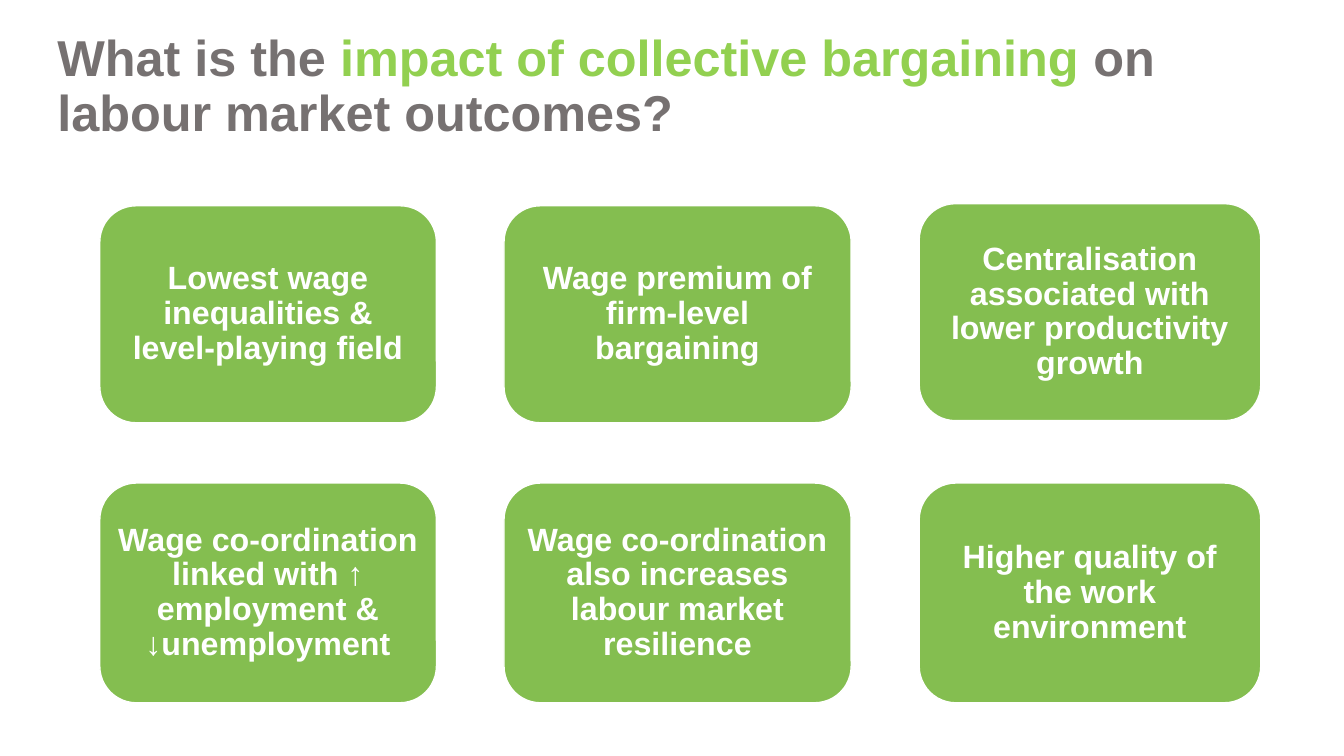
import pptx
import pptx.util
import pptx.dml.color
import pptx.enum.shapes
import pptx.enum.text

Pt = pptx.util.Pt
GREEN, WHITE, GREY, LIME = "84BE50", "FFFFFF", "767171", "92D050"


def rgb(code):
    return pptx.dml.color.RGBColor.from_string(code)


def write(shape, runs, size, align="LEFT", pad=7.2):
    """Fill a shape with one bold paragraph made of (text, colour) runs."""
    frame = shape.text_frame
    frame.word_wrap = True
    frame.vertical_anchor = pptx.enum.text.MSO_ANCHOR.MIDDLE
    frame.margin_left = frame.margin_right = Pt(pad)
    para = frame.paragraphs[0]
    para.alignment = getattr(pptx.enum.text.PP_ALIGN, align)
    para.line_spacing = 0.9
    for text, color in runs:
        run = para.add_run()
        run.text = text
        run.font.name = "Arial"
        run.font.size = Pt(size)
        run.font.bold = True
        run.font.color.rgb = rgb(color)


deck = pptx.Presentation()
deck.slide_width, deck.slide_height = Pt(960), Pt(540)
slide = deck.slides.add_slide(deck.slide_layouts[6])

title = slide.shapes.add_textbox(Pt(33.84), Pt(22.3), Pt(900.7), Pt(80.6))
write(title, [("What is the ", GREY),
              ("impact of collective bargaining ", LIME),
              ("on labour market outcomes?", GREY)], 36)

# Each card: left, top, width, height, side padding, text
cards = [
    (71.3, 147, 240.5, 155, 7.2, "Lowest wage inequalities & level-playing field"),
    (360, 147, 248, 155, 7.2, "Wage premium of firm-level bargaining"),
    (656.6, 145.5, 244, 155, 7.2, "Centralisation associated with lower productivity growth"),
    (71.3, 345, 240.5, 157, 0, "Wage co-ordination linked with ↑ employment & ↓unemployment"),
    (360, 345, 248, 157, 7.2, "Wage co-ordination also increases labour market resilience"),
    (656.6, 345, 244, 157, 7.2, "Higher quality of the work environment"),
]
kind = pptx.enum.shapes.MSO_SHAPE.FLOWCHART_ALTERNATE_PROCESS
for left, top, width, height, pad, text in cards:
    card = slide.shapes.add_shape(kind, Pt(left), Pt(top), Pt(width), Pt(height))
    card.shadow.inherit = False
    card.fill.solid()
    card.fill.fore_color.rgb = rgb(GREEN)
    card.line.color.rgb = rgb(WHITE)
    card.line.width = Pt(1)
    write(card, [(text, WHITE)], 23, align="CENTER", pad=pad)

deck.save("out.pptx")
